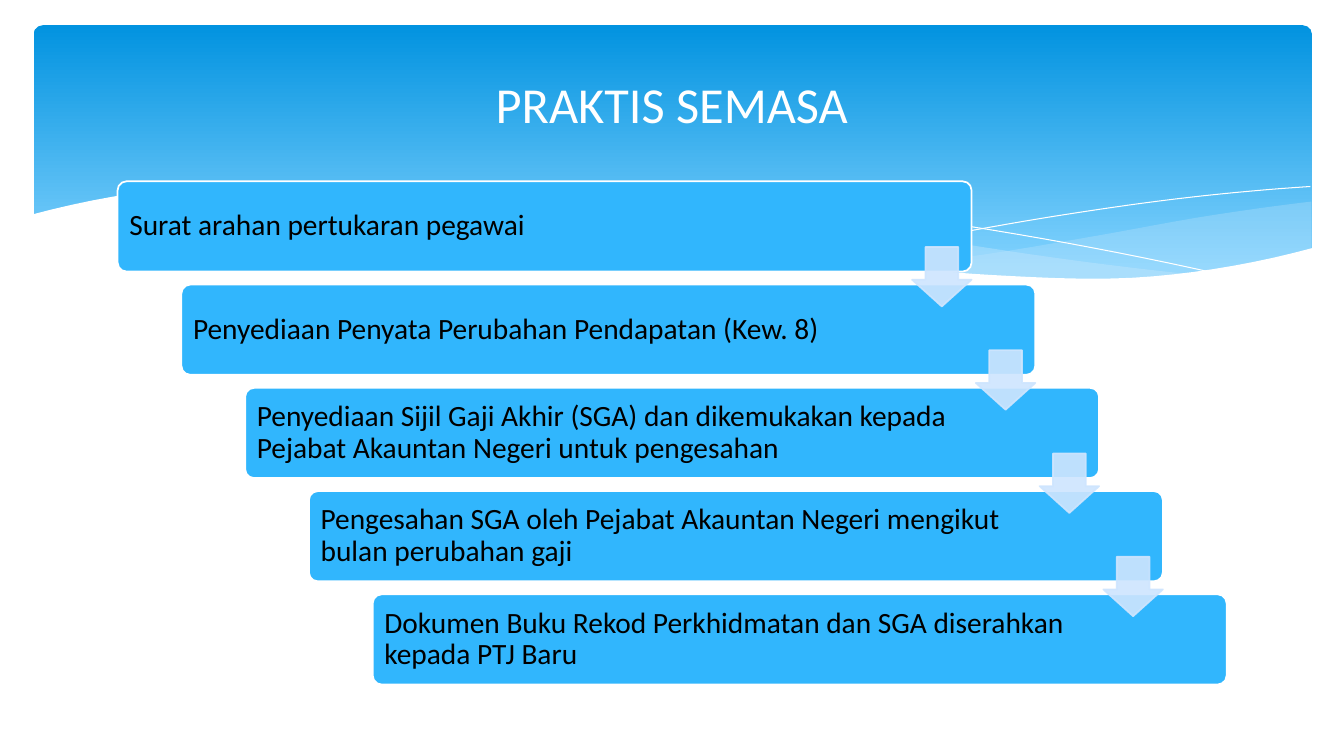
import pptx
import pptx.dml.color
import pptx.enum.shapes
import pptx.enum.text
import pptx.oxml
import pptx.oxml.ns
import pptx.util

Pt = pptx.util.Pt
SHAPES = pptx.enum.shapes.MSO_SHAPE
ALIGN = pptx.enum.text.PP_ALIGN

TITLE = "PRAKTIS SEMASA"
STEPS = [
    "Surat arahan pertukaran pegawai",
    "Penyediaan Penyata Perubahan Pendapatan (Kew. 8)",
    "Penyediaan Sijil Gaji Akhir (SGA) dan dikemukakan kepada Pejabat Akauntan Negeri untuk pengesahan",
    "Pengesahan SGA oleh Pejabat Akauntan Negeri mengikut bulan perubahan gaji",
    "Dokumen Buku Rekod Perkhidmatan dan SGA diserahkan kepada PTJ Baru",
]

THEME = {
    "font": "Calibri",
    "title_size": 36,
    "step_size": 21,
    "white": "FFFFFF",
    "text": "000000",
    "box": "31B6FD",
    "arrow": "CEE5FE",
    "ribbon": "C6E7FC",
    "banner_top": "0293E0",
    "banner_bottom": "83D3FE",
}

RIBBONS = [
    {"span": (635, 936.7), "opacity": 29, "color": "ribbon",
     "upper": [190.8, 180.7, 168, 154.5, 144],
     "lower": [190.8, 197.6, 200.2, 194.4, 177.8]},
    {"span": (275, 856.8), "opacity": 40, "color": "ribbon",
     "upper": [137.5, 133.3, 139.8, 153, 170.2, 185, 196.6],
     "lower": [137.5, 149.5, 166.3, 181.7, 194.1, 199.9, 196.6]},
]
THIN_LINES = [
    {"span": (296.6, 871.2), "heights": [140.4, 135.7, 146.9, 167.5, 195.8]},
    {"span": (589, 936), "heights": [185, 168, 153, 141, 133.2]},
]
BANNER_CUT = {
    "span": (22.3, 938.2), "opacity": 100, "color": "white",
    "upper": [153.4, 133.3, 134.6, 147.6, 167.3, 185, 196.5, 197.4, 177],
    "lower": [236.9, 236.9, 236.9, 236.9],
}
POINTS_PER_INTERVAL = 8

BANNER = (24, 18, 913, 194.4)
TITLE_BOX = (84, 38.2, 792, 70.6)
FIRST_BOX = (84, 129.5, 610, 64.5)
FIRST_ARROW = (651.5, 176.4, 42.5, 42.5)
STEP_RIGHT, STEP_DOWN = 45.55, 73.75
BOX_MARGIN_LEFT, BOX_MARGIN_RIGHT = 6.5, 95
OUTLINE_WIDTH = 1.25


def color(name):
    return pptx.dml.color.RGBColor.from_string(THEME[name])


def paint(fill, name, opacity=100):
    fill.solid()
    fill.fore_color.rgb = color(name)
    if opacity < 100:
        for element in fill._xPr.iter(pptx.oxml.ns.qn("a:srgbClr")):
            namespace = pptx.oxml.ns.nsdecls("a")
            element.append(pptx.oxml.parse_xml(f'<a:alpha {namespace} val="{opacity * 1000}"/>'))


def outline(shape, name, opacity=100, width=OUTLINE_WIDTH):
    paint(shape.line.fill, name, opacity)
    shape.line.width = Pt(width)


def smooth_curve(span, heights):
    left, right = span
    before = 3 * heights[0] - 3 * heights[1] + heights[2]
    after = 3 * heights[-1] - 3 * heights[-2] + heights[-3]
    knots = [before, *heights, after]
    total = (len(heights) - 1) * POINTS_PER_INTERVAL
    curve = []
    for number in range(total + 1):
        interval = min(number // POINTS_PER_INTERVAL, len(heights) - 2)
        t = number / POINTS_PER_INTERVAL - interval
        a, b, c, d = knots[interval:interval + 4]
        height = b + t / 2 * (c - a + t * (2 * a - 5 * b + 4 * c - d + t * (3 * b - a - 3 * c + d)))
        curve.append((Pt(left + (right - left) * number / total), Pt(height)))
    return curve


def add_freeform(slide, points, close):
    builder = slide.shapes.build_freeform(*points[0])
    builder.add_line_segments(points[1:], close=close)
    shape = builder.convert_to_shape()
    shape.shadow.inherit = False
    return shape


def add_ribbon(slide, ribbon):
    upper = smooth_curve(ribbon["span"], ribbon["upper"])
    lower = smooth_curve(ribbon["span"], ribbon["lower"])
    shape = add_freeform(slide, upper + lower[::-1], True)
    paint(shape.fill, ribbon["color"], ribbon["opacity"])
    shape.line.fill.background()


def add_thin_line(slide, thin_line):
    shape = add_freeform(slide, smooth_curve(thin_line["span"], thin_line["heights"]), False)
    shape.fill.background()
    outline(shape, "white", width=0)


def add_preset(slide, kind, bounds, adjustments):
    shape = slide.shapes.add_shape(kind, *map(Pt, bounds))
    shape.shadow.inherit = False
    for index, value in enumerate(adjustments):
        shape.adjustments[index] = value
    return shape


def add_banner(slide):
    banner = add_preset(slide, SHAPES.ROUNDED_RECTANGLE, BANNER, [0.034])
    banner.line.fill.background()
    banner.fill.gradient()
    banner.fill.gradient_angle = 270
    top, bottom = banner.fill.gradient_stops
    top.position, top.color.rgb = 0, color("banner_top")
    bottom.position, bottom.color.rgb = 0.9, color("banner_bottom")


def write(shape, text, size, color_name, alignment):
    frame = shape.text_frame
    frame.word_wrap = True
    frame.vertical_anchor = pptx.enum.text.MSO_ANCHOR.MIDDLE
    paragraph = frame.paragraphs[0]
    paragraph.alignment = alignment
    run = paragraph.add_run()
    run.text = text
    run.font.name = THEME["font"]
    run.font.size = Pt(THEME[size])
    run.font.color.rgb = color(color_name)


def stair(first, index):
    left, top, width, height = first
    return left + index * STEP_RIGHT, top + index * STEP_DOWN, width, height


def add_step(slide, index, text):
    box = add_preset(slide, SHAPES.ROUNDED_RECTANGLE, stair(FIRST_BOX, index), [0.1])
    paint(box.fill, "box")
    outline(box, "white")
    write(box, text, "step_size", "text", ALIGN.LEFT)
    box.text_frame.paragraphs[0].line_spacing = 0.9
    box.text_frame.margin_left = Pt(BOX_MARGIN_LEFT)
    box.text_frame.margin_right = Pt(BOX_MARGIN_RIGHT)


def add_arrow(slide, index):
    arrow = add_preset(slide, SHAPES.DOWN_ARROW, stair(FIRST_ARROW, index), [0.55, 0.45])
    paint(arrow.fill, "arrow", 90)
    outline(arrow, "arrow", 90)


def main():
    presentation = pptx.Presentation()
    presentation.slide_width = Pt(960)
    presentation.slide_height = Pt(540)
    slide = presentation.slides.add_slide(presentation.slide_layouts[6])
    add_banner(slide)
    for ribbon in RIBBONS:
        add_ribbon(slide, ribbon)
    for thin_line in THIN_LINES:
        add_thin_line(slide, thin_line)
    add_ribbon(slide, BANNER_CUT)
    for index, text in enumerate(STEPS):
        add_step(slide, index, text)
    for index in range(len(STEPS) - 1):
        add_arrow(slide, index)
    title = slide.shapes.add_textbox(*map(Pt, TITLE_BOX))
    write(title, TITLE, "title_size", "white", ALIGN.CENTER)
    presentation.save("out.pptx")


if __name__ == "__main__":
    main()
